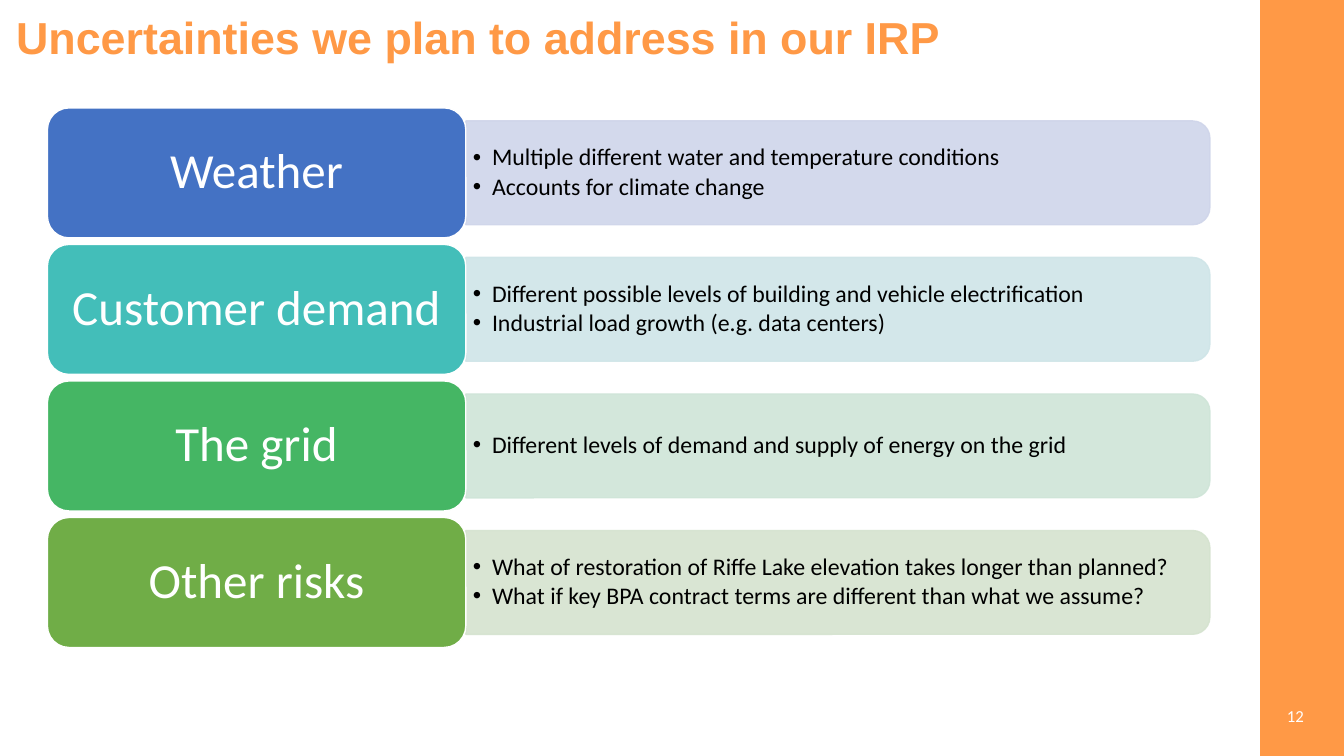
from lxml import etree
from pptx import Presentation
from pptx.dml.color import RGBColor
from pptx.enum import shapes, text
from pptx.oxml.ns import qn
from pptx.util import Inches, Pt

ORANGE, WHITE, BLACK = "FF9946", "FFFFFF", "000000"
LABEL_LEFT, LABEL_WIDTH, LABEL_HEIGHT = 0.47, 4.15, 1.29
PANEL_WIDTH, PANEL_HEIGHT = 7.38, 1.03
FIRST_TOP = 1.07
ROW_PITCH = LABEL_HEIGHT * 1.05

TOPICS = [
    ("Weather", "4472C4", "CFD5EA", [
        "Multiple different water and temperature conditions",
        "Accounts for climate change"]),
    ("Customer demand", "43BEB9", "CFE5E8", [
        "Different possible levels of building and vehicle electrification",
        "Industrial load growth (e.g. data centers)"]),
    ("The grid", "45B664", "CFE5D8", [
        "Different levels of demand and supply of energy on the grid"]),
    ("Other risks", "70AD47", "D5E3CF", [
        "What of restoration of Riffe Lake elevation takes longer than planned?",
        "What if key BPA contract terms are different than what we assume?"]),
]


def color(hex_value):
    return RGBColor.from_string(hex_value)


def apply(target, values):
    for name, value in values.items():
        setattr(target, name, value)


def set_frame(frame, side, edge):
    """Wrap and centre the text vertically, with insets in inches."""
    apply(frame, {
        "word_wrap": True,
        "auto_size": text.MSO_AUTO_SIZE.NONE,
        "vertical_anchor": text.MSO_ANCHOR.MIDDLE,
        "margin_left": Inches(side), "margin_right": Inches(side),
        "margin_top": Inches(edge), "margin_bottom": Inches(edge),
    })


def write(paragraph, wording, size, hex_value, align, font="Calibri", bold=False):
    paragraph.text = wording
    apply(paragraph, {"alignment": align, "line_spacing": 0.9})
    apply(paragraph.font, {"name": font, "size": Pt(size), "bold": bold})
    paragraph.font.color.rgb = color(hex_value)


def add_block(slide, kind, box, fill, line):
    block = slide.shapes.add_shape(kind, *map(Inches, box))
    block.shadow.inherit = False
    block.fill.solid()
    block.fill.fore_color.rgb = color(fill)
    block.line.color.rgb = color(line)
    block.line.width = Pt(1)
    return block


def add_text_box(slide, box, side, edge):
    frame = slide.shapes.add_textbox(*map(Inches, box)).text_frame
    set_frame(frame, side, edge)
    return frame


def add_bullet(paragraph):
    properties = paragraph._p.get_or_add_pPr()
    properties.set("marL", str(Inches(0.19)))
    properties.set("indent", str(-Inches(0.19)))
    etree.SubElement(properties, qn("a:buFont")).set("typeface", "Arial")
    etree.SubElement(properties, qn("a:buChar")).set("char", "•")


def add_panel(slide, left, middle, tint):
    """Add a translucent bar whose rounded end faces right."""
    box = (left + (PANEL_WIDTH - PANEL_HEIGHT) / 2, middle - PANEL_WIDTH / 2,
           PANEL_HEIGHT, PANEL_WIDTH)
    panel = add_block(slide, shapes.MSO_SHAPE.ROUND_2_SAME_RECTANGLE, box, tint, tint)
    panel.rotation = 90
    for shade in panel._element.spPr.iter(qn("a:srgbClr")):
        etree.SubElement(shade, qn("a:alpha")).set("val", "90000")


def add_topic(slide, top, name, fill, tint, points):
    middle = top + LABEL_HEIGHT / 2
    panel_left = LABEL_LEFT + LABEL_WIDTH
    add_panel(slide, panel_left, middle, tint)

    frame = add_text_box(slide, (panel_left, middle - 0.465, 7.33, 0.93), 0.07, 0.04)
    for index, point in enumerate(points):
        paragraph = frame.add_paragraph() if index else frame.paragraphs[0]
        add_bullet(paragraph)
        write(paragraph, point, 17, BLACK, text.PP_ALIGN.LEFT)
        paragraph.space_after = Pt(2.5)

    label = add_block(slide, shapes.MSO_SHAPE.ROUNDED_RECTANGLE,
                      (LABEL_LEFT, top, LABEL_WIDTH, LABEL_HEIGHT), fill, WHITE)
    set_frame(label.text_frame, 0.15, 0.07)
    write(label.text_frame.paragraphs[0], name, 35, WHITE, text.PP_ALIGN.CENTER)


def add_title(slide, wording):
    title = slide.shapes.title
    apply(title, {"left": Inches(0.06), "top": Inches(0.08),
                  "width": Inches(10.21), "height": Inches(0.64)})
    set_frame(title.text_frame, 0.1, 0.05)
    write(title.text_frame.paragraphs[0], wording, 32, ORANGE,
          text.PP_ALIGN.LEFT, "Arial", True)


def main():
    deck = Presentation()
    deck.slide_width, deck.slide_height = Inches(13.33), Inches(7.5)
    slide = deck.slides.add_slide(deck.slide_layouts[5])

    add_block(slide, shapes.MSO_SHAPE.RECTANGLE, (12.5, 0, 0.83, 7.5), ORANGE, ORANGE)
    add_title(slide, "Uncertainties we plan to address in our IRP")
    for row, topic in enumerate(TOPICS):
        add_topic(slide, FIRST_TOP + row * ROW_PITCH, *topic)
    page = add_text_box(slide, (10.03, 6.91, 3, 0.4), 0.1, 0.05)
    write(page.paragraphs[0], "12", 12, WHITE, text.PP_ALIGN.RIGHT)

    deck.save("out.pptx")


if __name__ == "__main__":
    main()
